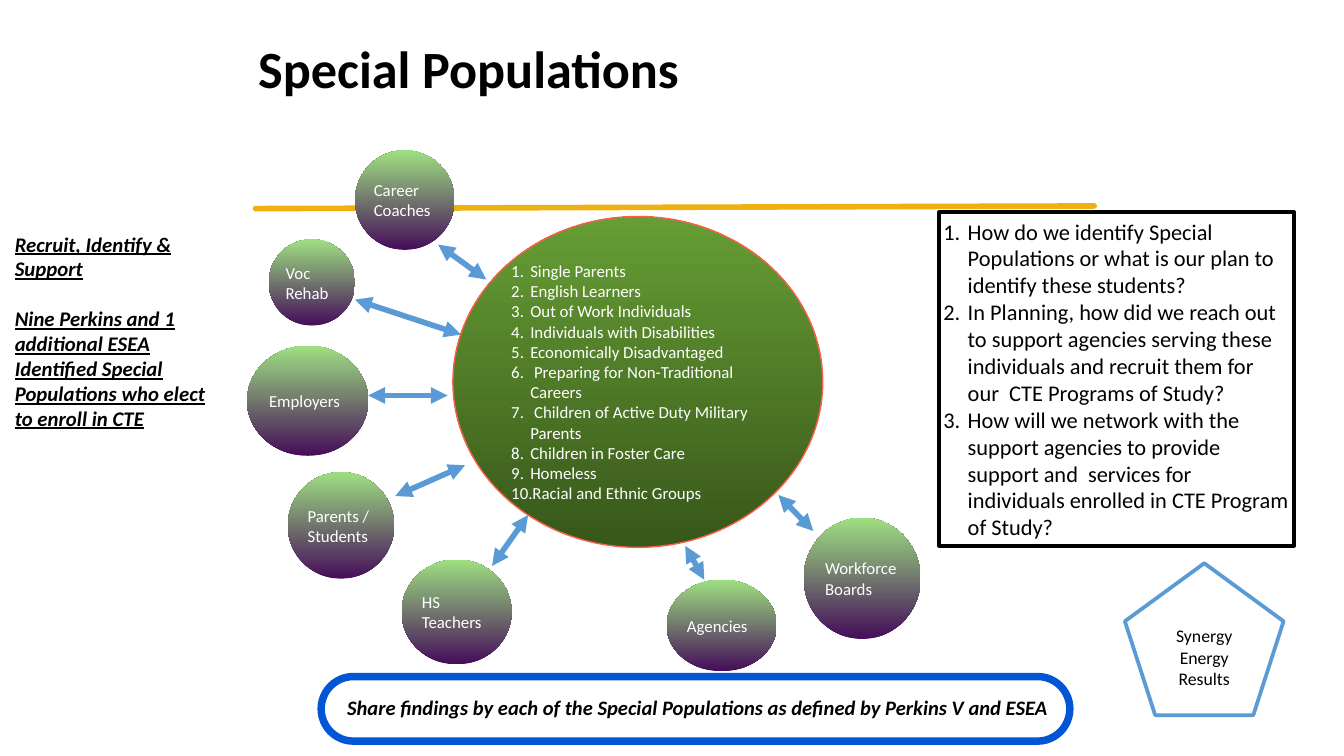
from lxml import etree
from pptx import Presentation
from pptx.dml.color import RGBColor
from pptx.enum.shapes import MSO_CONNECTOR, MSO_SHAPE
from pptx.enum.text import MSO_ANCHOR, MSO_AUTO_SIZE, PP_ALIGN
from pptx.oxml.ns import qn
from pptx.util import Cm, Pt

STRAIGHT = MSO_CONNECTOR.STRAIGHT
OVAL, RECTANGLE = MSO_SHAPE.OVAL, MSO_SHAPE.RECTANGLE
ROUNDED, PENTAGON = MSO_SHAPE.ROUNDED_RECTANGLE, MSO_SHAPE.REGULAR_PENTAGON
TOP, MIDDLE = MSO_ANCHOR.TOP, MSO_ANCHOR.MIDDLE
LEFT, CENTER = PP_ALIGN.LEFT, PP_ALIGN.CENTER

FONT = "Calibri"
COLORS = {
    "black": "000000",
    "white": "FFFFFF",
    "gold": "EEB111",
    "arrow": "5B9BD5",
    "banner": "0056D6",
    "hub_bottom": "38571A",
    "hub_top": "669D34",
    "hub_edge": "FD5E48",
    "partner_bottom": "450D59",
    "partner_top": "9EE081",
}
RGB = {name: RGBColor.from_string(value) for name, value in COLORS.items()}


def write_text(shape, lines, size, color="black", anchor=MIDDLE, align=LEFT,
               bold=False, italic=False, underline=False, number_indent=0, gap=0):
    """Fill a shape with paragraphs, numbered when number_indent is given."""
    frame = shape.text_frame
    frame.word_wrap = True
    frame.auto_size = MSO_AUTO_SIZE.NONE
    frame.vertical_anchor = anchor
    frame.margin_left = frame.margin_right = Cm(0.08)
    frame.margin_top = frame.margin_bottom = Cm(0.08)
    frame.text = "\n".join(lines)
    for index, paragraph in enumerate(frame.paragraphs):
        paragraph.alignment = align
        if index and gap:
            paragraph.space_before = Pt(gap)
        if number_indent:
            properties = paragraph._p.get_or_add_pPr()
            properties.set("marL", str(Cm(number_indent)))
            properties.set("indent", str(-Cm(number_indent)))
            etree.SubElement(properties, qn("a:buAutoNum"), type="arabicPeriod")
        for run in paragraph.runs:
            font = run.font
            font.name, font.size, font.color.rgb = FONT, Pt(size), RGB[color]
            font.bold, font.italic, font.underline = bold, italic, underline


def add_block(kind, box, fill=None, line=None, width=1):
    """Add a preset shape; fill is a (bottom, top) pair, one colour or None."""
    shape = slide.shapes.add_shape(kind, *map(Cm, box))
    shape.shadow.inherit = False
    if isinstance(fill, tuple):
        shape.fill.gradient()
        shape.fill.gradient_angle = 90
        for stop, color in zip(shape.fill.gradient_stops, fill):
            stop.color.rgb = RGB[color]
    elif fill:
        shape.fill.solid()
        shape.fill.fore_color.rgb = RGB[fill]
    else:
        shape.fill.background()
    if line:
        shape.line.color.rgb = RGB[line]
        shape.line.width = Pt(width)
    else:
        shape.line.fill.background()
    return shape


presentation = Presentation()
presentation.slide_width, presentation.slide_height = Cm(25.4), Cm(14.28)
slide = presentation.slides.add_slide(presentation.slide_layouts[5])

# Title
title = slide.shapes.title
title.left, title.top, title.width, title.height = map(Cm, (4.8, 0.61, 15.9, 2.29))
write_text(title, ["Special Populations"], 28, anchor=TOP, bold=True)

# Gold rule and double-headed arrows; the rule lies behind the circles
connectors = [
    ((4.83, 3.94, 20.68, 3.89), "gold"),
    ((9.19, 5.28, 8.28, 4.62), "arrow"),
    ((6.96, 7.47, 8.46, 7.47), "arrow"),
    ((9.3, 10.69, 9.98, 9.73), "arrow"),
    ((14.71, 9.35, 15.37, 10.03), "arrow"),
    ((8.71, 6.32, 6.71, 5.66), "arrow"),
    ((7.47, 9.37, 8.79, 8.79), "arrow"),
    ((13.31, 10.95, 12.95, 10.31), "arrow"),
]
for ends, color in connectors:
    connector = slide.shapes.add_connector(STRAIGHT, *map(Cm, ends))
    connector.line.color.rgb = RGB[color]
    connector.line.width = Pt(3)
    outline = connector.line._get_or_add_ln()
    if color == "arrow":
        for end in ("a:headEnd", "a:tailEnd"):
            etree.SubElement(outline, qn(end), type="triangle")
    else:
        outline.set("cap", "rnd")
    etree.SubElement(connector._element.spPr, qn("a:effectLst"))

# Purpose statement on the left
purpose = slide.shapes.add_textbox(Cm(0.2), Cm(4.29), Cm(3.99), Cm(4.45))
write_text(purpose, [
    "Recruit, Identify & Support",
    "Nine Perkins and 1 additional ESEA Identified Special Populations who elect to enroll in CTE",
], 11.1, anchor=TOP, bold=True, italic=True, underline=True, gap=13.4)

# Planning questions on the right
questions = add_block(RECTANGLE, (17.75, 4.01, 6.71, 6.3), line="black", width=2)
write_text(questions, [
    "How do we identify Special Populations or what is our plan to identify these students?",
    "In Planning, how did we reach out to support agencies serving these individuals "
    "and recruit them for our  CTE Programs of Study?",
    "How will we network with the support agencies to provide support and  services for "
    "individuals enrolled in CTE Program of Study?",
], 12, number_indent=0.46)

# Banner at the bottom
banner = add_block(ROUNDED, (6.07, 12.78, 14.15, 1.22), line="banner", width=4)
banner.adjustments[0] = 0.5
banner_text = slide.shapes.add_textbox(Cm(6.48), Cm(13.06), Cm(14.2), Cm(0.61))
write_text(banner_text, [
    "Share findings by each of the Special Populations as defined by Perkins V and ESEA",
], 11, bold=True, italic=True)

# Central list of populations
hub = add_block(OVAL, (8.56, 4.09, 6.99, 6.25), ("hub_bottom", "hub_top"), "hub_edge", 0.75)
write_text(hub, [
    "Single Parents",
    "English Learners",
    "Out of Work Individuals",
    "Individuals with Disabilities",
    "Economically Disadvantaged",
    " Preparing for Non-Traditional Careers",
    " Children of Active Duty Military Parents",
    "Children in Foster Care",
    "Homeless",
    "Racial and Ethnic Groups",
], 9, "white", number_indent=0.36)

# Partners around the centre
partners = [
    ("Career Coaches", (6.71, 2.84, 1.88, 1.88)),
    ("Voc Rehab", (5.08, 4.52, 1.63, 1.63)),
    ("Employers", (4.67, 6.53, 2.29, 2.08)),
    ("Parents /Students", (5.44, 8.92, 2.01, 2.01)),
    ("HS Teachers", (7.59, 10.57, 2.08, 1.98)),
    ("Agencies", (12.6, 10.95, 2.08, 1.73)),
    ("Workforce Boards", (15.19, 9.78, 2.21, 2.29)),
]
for name, box in partners:
    partner = add_block(OVAL, box, ("partner_bottom", "partner_top"))
    write_text(partner, [name], 9, "white")

# Outcome pentagon
outcome = add_block(PENTAGON, (21.26, 10.64, 3, 2.87), "white", "arrow", 2)
write_text(outcome, ["Synergy", "Energy", "Results"], 9.5, align=CENTER)

presentation.save("out.pptx")
